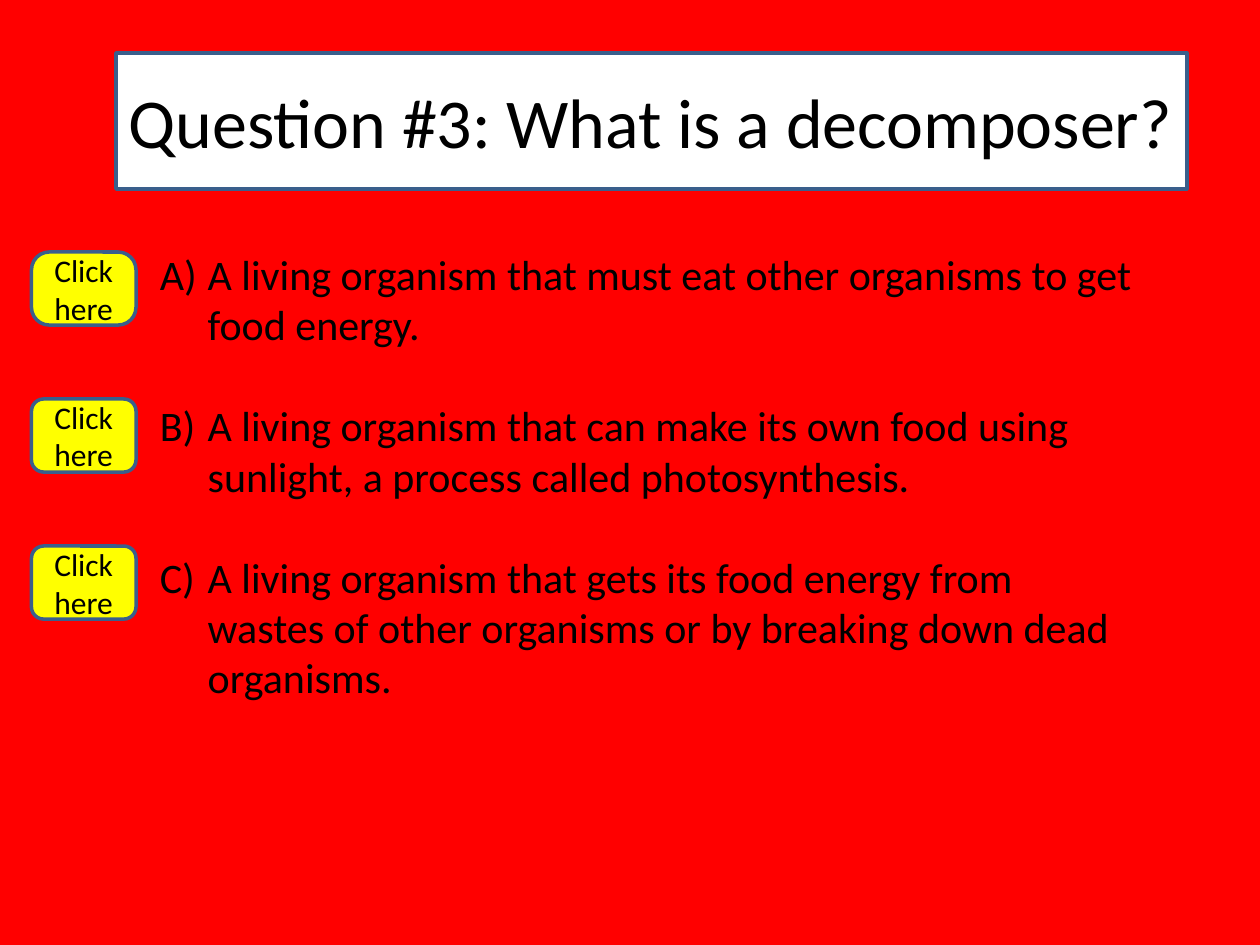
from pptx import Presentation
from pptx.dml.color import RGBColor
from pptx.enum.shapes import MSO_SHAPE
from pptx.enum.text import MSO_ANCHOR, MSO_AUTO_SIZE, PP_ALIGN
from pptx.oxml.ns import qn
from pptx.util import Inches, Pt

ROUNDED = MSO_SHAPE.ROUNDED_RECTANGLE
MIDDLE = MSO_ANCHOR.MIDDLE
LEFT, CENTER = PP_ALIGN.LEFT, PP_ALIGN.CENTER
FONT = "Calibri"
COLORS = {"background": "FF0000", "title": "FFFFFF", "button": "FFFF00",
          "border": "3A5F8C", "text": "000000"}
TITLE = "Question #3: What is a decomposer?"
# Each answer is a list of lines; lines after the first follow a line break.
ANSWERS = [
    ["A living organism that must eat other organisms to get food energy."],
    ["A living organism that can make its own food using",
     "sunlight, a process called photosynthesis."],
    ["A living organism that gets its food energy from",
     "wastes of other organisms or by breaking down dead organisms."],
]
BUTTON_TOP, BUTTON_PITCH = 2, 3.5 / 3
BUTTON_ROUNDING = [0.245, 0.167, 0.167]


def color(name):
    return RGBColor.from_string(COLORS[name])


def add_run(paragraph, text, size):
    run = paragraph.add_run()
    run.text = text
    run.font.name = FONT
    run.font.size = Pt(size)
    run.font.color.rgb = color("text")


def paint(shape, fill):
    shape.fill.solid()
    shape.fill.fore_color.rgb = color(fill)
    shape.line.color.rgb = color("border")
    shape.line.width = Pt(2)


def set_title(slide):
    title = slide.shapes.title
    title.left, title.top = Inches(0.92), Inches(0.42)
    title.width, title.height = Inches(8.5), Inches(1.08)
    paint(title, "title")
    frame = title.text_frame
    frame.auto_size = MSO_AUTO_SIZE.NONE
    frame.vertical_anchor = MIDDLE
    frame.paragraphs[0].alignment = LEFT
    add_run(frame.paragraphs[0], TITLE, 40)


def letter(paragraph):
    """Number the paragraph A), B), C) with a hanging indent."""
    properties = paragraph._p.get_or_add_pPr()
    properties.set("marL", str(Inches(0.38)))
    properties.set("indent", str(Inches(-0.38)))
    bullet = properties.makeelement(qn("a:buAutoNum"), {"type": "alphaUcParenR"})
    properties.append(bullet)


def add_answers(slide):
    box = slide.shapes.add_textbox(Inches(1.17), Inches(1.92), Inches(7.92), Inches(4.14))
    frame = box.text_frame
    frame.word_wrap = True
    for index, lines in enumerate(ANSWERS):
        paragraph = frame.add_paragraph() if index else frame.paragraphs[0]
        if index:
            paragraph.space_before = Pt(29)
        letter(paragraph)
        for number, line in enumerate(lines):
            if number:
                paragraph.add_line_break()
            add_run(paragraph, line, 24)


def add_button(slide, top, rounding):
    button = slide.shapes.add_shape(ROUNDED, Inches(0.25), Inches(top),
                                    Inches(0.83), Inches(0.58))
    button.adjustments[0] = rounding
    button.shadow.inherit = False
    paint(button, "button")
    frame = button.text_frame
    frame.word_wrap = True
    frame.vertical_anchor = MIDDLE
    frame.paragraphs[0].alignment = CENTER
    add_run(frame.paragraphs[0], "Click here", 18)


def main():
    presentation = Presentation()
    presentation.slide_width, presentation.slide_height = Inches(10), Inches(7.5)
    slide = presentation.slides.add_slide(presentation.slide_layouts[5])
    slide.background.fill.solid()
    slide.background.fill.fore_color.rgb = color("background")
    set_title(slide)
    add_answers(slide)
    for index, rounding in enumerate(BUTTON_ROUNDING):
        add_button(slide, BUTTON_TOP + index * BUTTON_PITCH, rounding)
    presentation.save("out.pptx")


if __name__ == "__main__":
    main()
